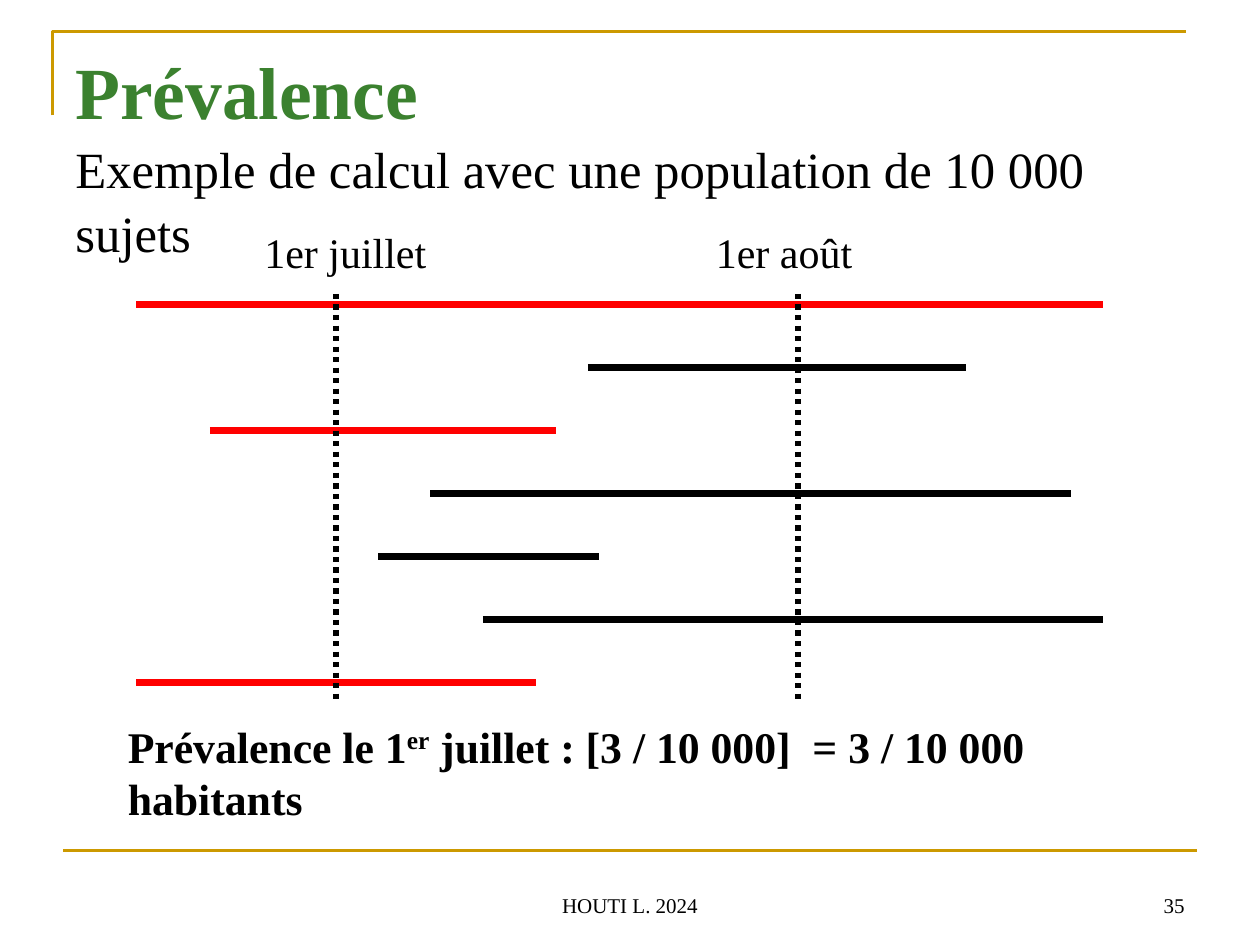
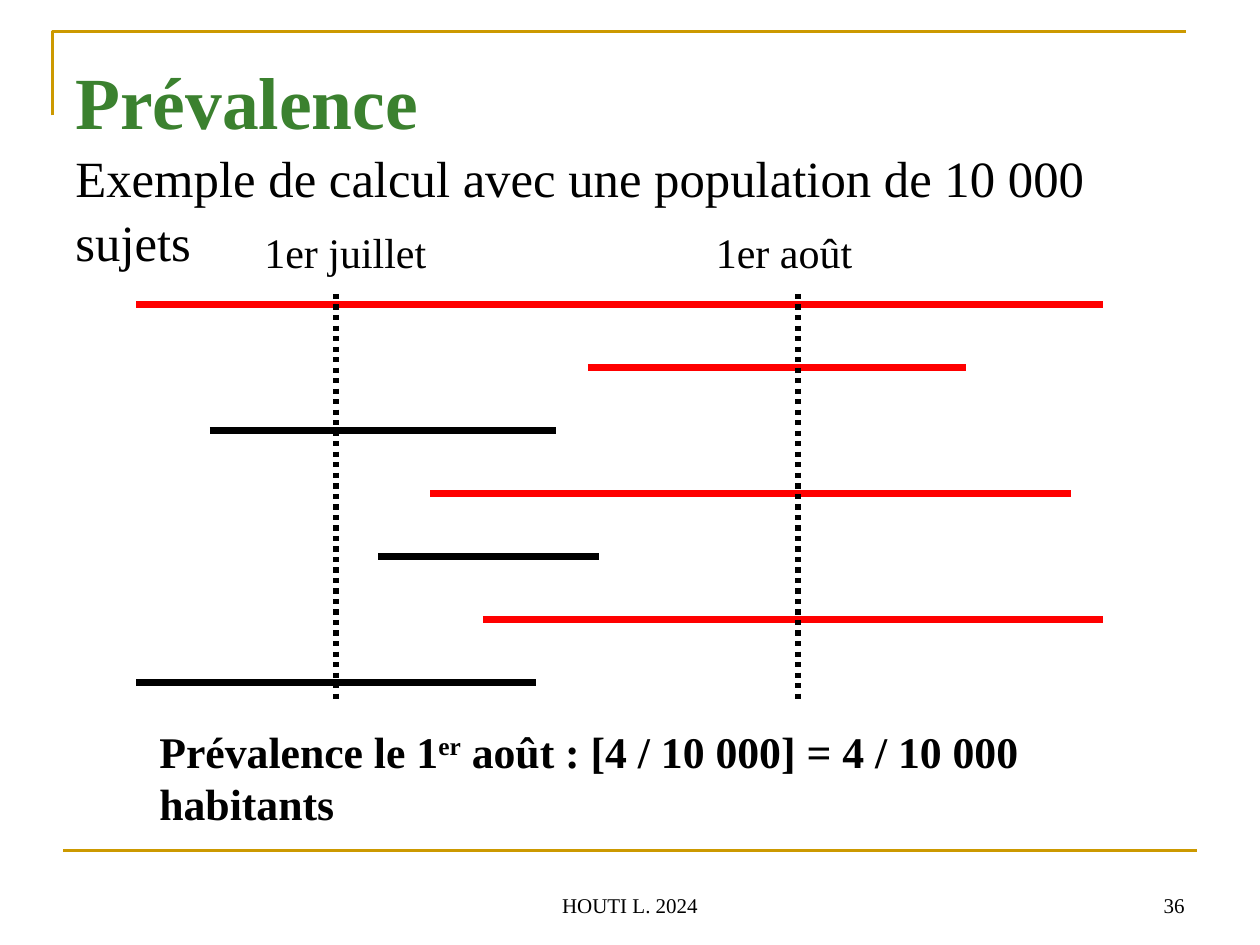
from lxml.etree import SubElement
from pptx import Presentation
from pptx.dml.color import RGBColor
from pptx.enum.dml import MSO_LINE
from pptx.enum.shapes import MSO_CONNECTOR
from pptx.enum.text import MSO_ANCHOR, PP_ALIGN
from pptx.oxml.ns import qn
from pptx.util import Inches, Pt

COLORS = {"gold": "CC9900", "green": "3B812F", "black": "000000", "case": "FF0000"}
FONT = "Times New Roman"
COLUMNS, ROWS = 120, 90
CELL = Inches(10) // COLUMNS

# Start and end column of each illness, one per line of the diagram
ILLNESSES = [(13, 105), (56, 92), (20, 53), (41, 102), (36, 57), (46, 105), (13, 51)]
FIRST_ROW, ROW_STEP = 29, 6
# Column of each date's dotted line, and left column of its label
DATES = {"juillet": (32, 24), "août": (76, 67)}


class SlideBuilder:
    """Draws on the current slide in grid units (columns and rows)."""

    def __init__(self, deck):
        self.deck = deck
        deck.slide_width, deck.slide_height = CELL * COLUMNS, CELL * ROWS

    def new_slide(self, number):
        self.page = self.deck.slides.add_slide(self.deck.slide_layouts[6])
        self.frame()
        self.line((6, 81), (114, 81), "gold", 1.5)
        self.text((41, 82, 38, 6), ["HOUTI L. 2024"], 12,
                  anchor=MSO_ANCHOR.BOTTOM, align=PP_ALIGN.CENTER)
        self.text((86, 82, 28, 6), [str(number)], 12,
                  anchor=MSO_ANCHOR.BOTTOM, align=PP_ALIGN.RIGHT)

    def frame(self):
        """Gold corner along the top and the upper left side."""
        outline = self.page.shapes.build_freeform(5, 11, scale=CELL)
        outline.add_line_segments([(5, 3), (113, 3)], close=False)
        corner = outline.convert_to_shape()
        corner.shadow.inherit = False
        corner.fill.background()
        self.stroke(corner.line, "gold", 1.5)

    def stroke(self, line, color, width):
        line.color.rgb = RGBColor.from_string(COLORS[color])
        line.width = Pt(width)

    def line(self, start, end, color, width, dash=None):
        ends = [CELL * value for value in (*start, *end)]
        connector = self.page.shapes.add_connector(MSO_CONNECTOR.STRAIGHT, *ends)
        self.stroke(connector.line, color, width)
        if dash:
            connector.line.dash_style = dash
        SubElement(connector._element.spPr, qn("a:effectLst"))

    def text(self, area, parts, size, bold=False, anchor=MSO_ANCHOR.MIDDLE,
             align=PP_ALIGN.LEFT):
        """Adds one paragraph with a run for each part and returns it."""
        box = self.page.shapes.add_textbox(*[round(CELL * value) for value in area])
        box.text_frame.word_wrap = True
        box.text_frame.vertical_anchor = anchor
        para = box.text_frame.paragraphs[0]
        para.alignment = align
        for part in parts:
            para.add_run().text = part
        for span in para.runs:
            self.style(span, size, "black", bold)
        return para

    def style(self, span, size, color, bold):
        span.font.name = FONT
        span.font.size = Pt(size)
        span.font.bold = bold
        span.font.color.rgb = RGBColor.from_string(COLORS[color])

    def title(self, top):
        para = self.text((6, top, 105, 11), [], 29, anchor=MSO_ANCHOR.TOP)
        para.text = "Prévalence\vExemple de calcul avec une population de 10 000 sujets"
        para.line_spacing = 1.05
        heading, subtitle = para.runs
        self.style(heading, 42, "green", True)
        self.style(subtitle, 29, "black", False)

    def timeline(self, month):
        """Illness lines, coloured as cases when they cross the month's date."""
        date = DATES[month][0]
        for index, (start, end) in enumerate(ILLNESSES):
            row = FIRST_ROW + index * ROW_STEP
            color = "case" if start <= date <= end else "black"
            self.line((start, row), (end, row), color, 4)
        for name, (column, label_left) in DATES.items():
            self.line((column, 28), (column, 67), "black", 3, MSO_LINE.ROUND_DOT)
            self.text((label_left, 21, 19, 6), [f"1er {name}"], 24)

    def conclusion(self, area, result):
        para = self.text(area, ["Prévalence le 1", "er", result], 25, bold=True)
        para.runs[1]._r.get_or_add_rPr().set("baseline", "30000")


def main():
    deck = Presentation()
    builder = SlideBuilder(deck)
    slides = [
        (35, 3.4, "juillet", (11, 66, 96, 15),
         " juillet : [3 / 10 000]  = 3 / 10 000 habitants"),
        (36, 4.3, "août", (14, 68, 94, 12),
         " août : [4 / 10 000] = 4 / 10 000 habitants"),
    ]
    for number, title_top, month, area, result in slides:
        builder.new_slide(number)
        builder.title(title_top)
        builder.timeline(month)
        builder.conclusion(area, result)
    deck.save("out.pptx")


if __name__ == "__main__":
    main()
